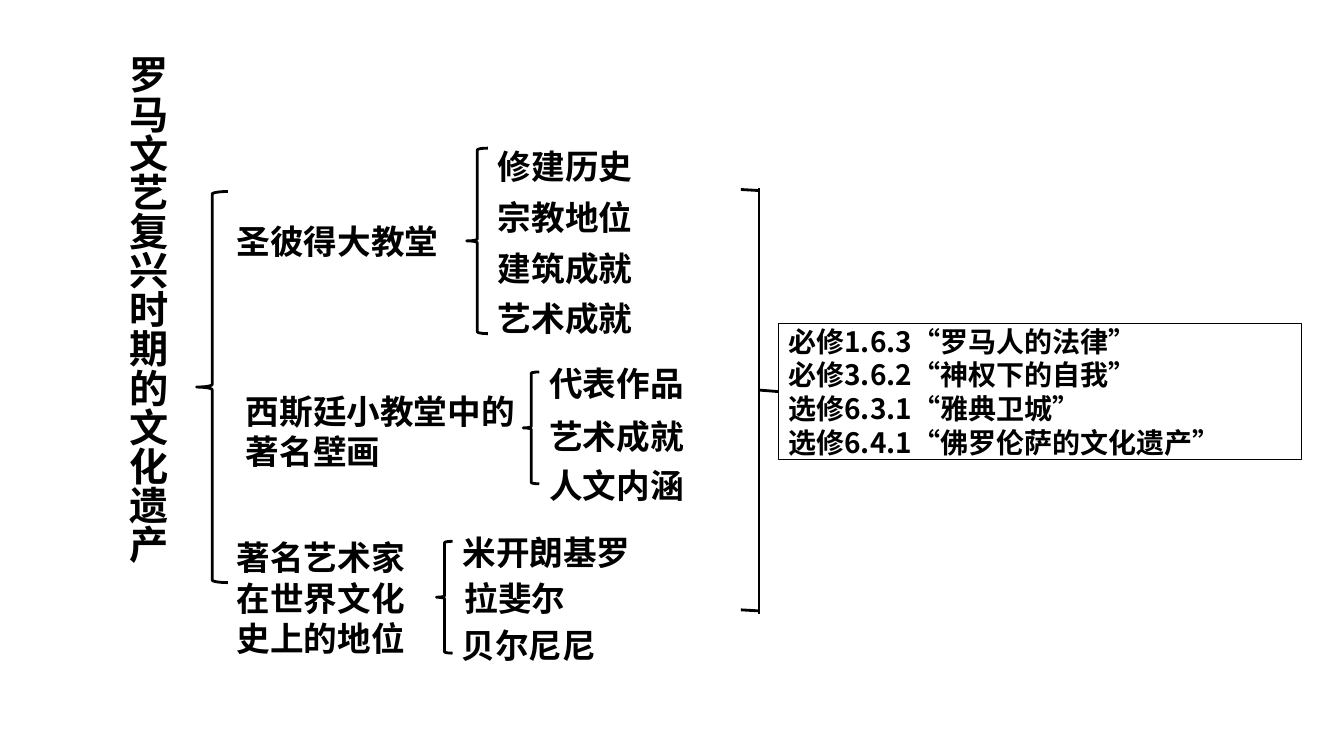
from dataclasses import dataclass

from lxml.etree import SubElement
from pptx import Presentation
from pptx.dml.color import RGBColor
from pptx.enum.lang import MSO_LANGUAGE_ID
from pptx.enum.shapes import MSO_CONNECTOR, MSO_SHAPE
from pptx.enum.text import MSO_ANCHOR, MSO_AUTO_SIZE, PP_ALIGN
from pptx.oxml.ns import qn
from pptx.util import Inches, Pt

CELL = 0.1
COLUMNS, ROWS = 133.33, 75
LINE_RATIO = 1.2


@dataclass(frozen=True)
class Theme:
    ink: RGBColor = RGBColor(0, 0, 0)
    paper: RGBColor = RGBColor(255, 255, 255)
    typeface: str = "Noto Sans CJK SC"
    title_size: float = 28
    topic_size: float = 24
    reference_size: float = 20
    brace_weight: float = 2
    frame_weight: float = 1


@dataclass(frozen=True)
class Area:
    column: float
    row: float
    columns: float
    rows: float


@dataclass(frozen=True)
class Detail:
    words: str
    column: float
    row: float


@dataclass(frozen=True)
class Branch:
    topic: list[str]
    topic_area: Area
    brace_area: Area
    details: list[Detail]


@dataclass(frozen=True)
class Stroke:
    start: tuple[float, float]
    end: tuple[float, float]


THEME = Theme()
TITLE = "罗马文艺复兴时期的文化遗产"
TITLE_AREA = Area(11.3, 5, 6.7, 67.3)
MAIN_BRACE = Area(19.5, 19, 3.1, 38.8)
DETAIL_ROWS = 5

BRANCHES = [
    Branch(
        ["圣彼得大教堂"],
        Area(22.5, 21.4, 35.5, 5),
        Area(46.3, 14.7, 2.1, 18.4),
        [
            Detail(words, 48.4, 14 + 5.03 * index)
            for index, words in enumerate(["修建历史", "宗教地位", "建筑成就", "艺术成就"])
        ],
    ),
    Branch(
        ["西斯廷小教堂中的", "著名壁画"],
        Area(23.4, 38.3, 33.2, 9),
        Area(51.9, 36.9, 1.6, 11.1),
        [
            Detail("代表作品", 53.5, 35.5),
            Detail("艺术成就", 53.5, 40.8),
            Detail("人文内涵", 53.5, 45.6),
        ],
    ),
    Branch(
        ["著名艺术家在世界文化史上的地位"],
        Area(22.5, 52.8, 20.8, 13),
        Area(43.3, 53.7, 1.6, 11.1),
        [
            Detail("米开朗基罗", 44.9, 52.3),
            Detail("拉斐尔", 45.1, 56.8),
            Detail("贝尔尼尼", 44.8, 61.5),
        ],
    ),
]

REFERENCES = [
    "必修1.6.3“罗马人的法律”",
    "必修3.6.2“神权下的自我”",
    "选修6.3.1“雅典卫城”",
    "选修6.4.1“佛罗伦萨的文化遗产”",
]
REFERENCE_AREA = Area(77.2, 31.6, 51.9, 14.5)
REFERENCE_STEM = Stroke((75.3, 38.7), (77.2, 38.85))
BRACKET = [
    Stroke((73.5, 18.8), (75.2, 18.9)),
    Stroke((73.5, 60.5), (75.2, 60.6)),
    Stroke((75.3, 18.7), (75.3, 60.9)),
]


def grid(cells: float) -> int:
    return Inches(cells * CELL)


def place(shape, area: Area) -> None:
    shape.left, shape.top = grid(area.column), grid(area.row)
    shape.width, shape.height = grid(area.columns), grid(area.rows)


def write(frame, lines: list[str], *, size: float, wrap: bool = True,
          vertical: bool = False, anchor: MSO_ANCHOR = MSO_ANCHOR.TOP) -> None:
    frame.word_wrap = wrap
    frame.auto_size = MSO_AUTO_SIZE.NONE if vertical else MSO_AUTO_SIZE.SHAPE_TO_FIT_TEXT
    frame.vertical_anchor = anchor
    if vertical:
        frame._txBody.bodyPr.set("vert", "eaVert")
    for index, line in enumerate(lines):
        paragraph = frame.add_paragraph() if index else frame.paragraphs[0]
        paragraph.alignment = PP_ALIGN.LEFT
        paragraph.space_before = paragraph.space_after = Pt(0)
        paragraph.line_spacing = Pt(size * LINE_RATIO)
        properties = paragraph._p.get_or_add_pPr()
        properties.set("marL", "0")
        properties.set("indent", "0")
        SubElement(properties, qn("a:buNone"))
        run = paragraph.add_run()
        run.text = line
        run.font.size = Pt(size)
        run.font.bold = True
        run.font.color.rgb = THEME.ink
        run.font.name = THEME.typeface
        run.font.language_id = MSO_LANGUAGE_ID.SIMPLIFIED_CHINESE
        SubElement(run._r.rPr, qn("a:ea"), typeface=THEME.typeface)


def draw_label(slide, lines: list[str], area: Area, wrap: bool = True) -> None:
    label = slide.shapes.add_textbox(0, 0, 0, 0)
    place(label, area)
    write(label.text_frame, lines, size=THEME.topic_size, wrap=wrap)


def draw_brace(slide, area: Area) -> None:
    brace = slide.shapes.add_shape(MSO_SHAPE.LEFT_BRACE, 0, 0, 0, 0)
    place(brace, area)
    brace.shadow.inherit = False
    brace.fill.background()
    brace.line.color.rgb = THEME.ink
    brace.line.width = Pt(THEME.brace_weight)


def draw_stroke(slide, stroke: Stroke):
    connector = slide.shapes.add_connector(
        MSO_CONNECTOR.STRAIGHT, *map(grid, stroke.start + stroke.end))
    connector.line.color.rgb = THEME.ink
    connector.line.width = Pt(THEME.brace_weight)
    SubElement(connector._element.spPr, qn("a:effectLst"))
    return connector


def draw_branch(slide, branch: Branch) -> None:
    draw_label(slide, branch.topic, branch.topic_area)
    draw_brace(slide, branch.brace_area)
    for detail in branch.details:
        columns = len(detail.words) * THEME.topic_size / 7.2 + 2
        draw_label(slide, [detail.words],
                   Area(detail.column, detail.row, columns, DETAIL_ROWS), wrap=False)


def main() -> None:
    deck = Presentation()
    deck.slide_width, deck.slide_height = grid(COLUMNS), grid(ROWS)
    slide = deck.slides.add_slide(deck.slide_layouts[1])
    slide.background.fill.solid()
    slide.background.fill.fore_color.rgb = THEME.paper

    heading, references = slide.placeholders
    place(heading, TITLE_AREA)
    write(heading.text_frame, [TITLE], size=THEME.title_size, vertical=True)

    draw_brace(slide, MAIN_BRACE)
    for branch in BRANCHES:
        draw_branch(slide, branch)

    place(references, REFERENCE_AREA)
    references.line.color.rgb = THEME.ink
    references.line.width = Pt(THEME.frame_weight)
    write(references.text_frame, REFERENCES, size=THEME.reference_size,
          anchor=MSO_ANCHOR.MIDDLE)
    draw_stroke(slide, REFERENCE_STEM).end_connect(references, 1)
    for stroke in BRACKET:
        draw_stroke(slide, stroke)

    deck.save("out.pptx")


if __name__ == "__main__":
    main()
